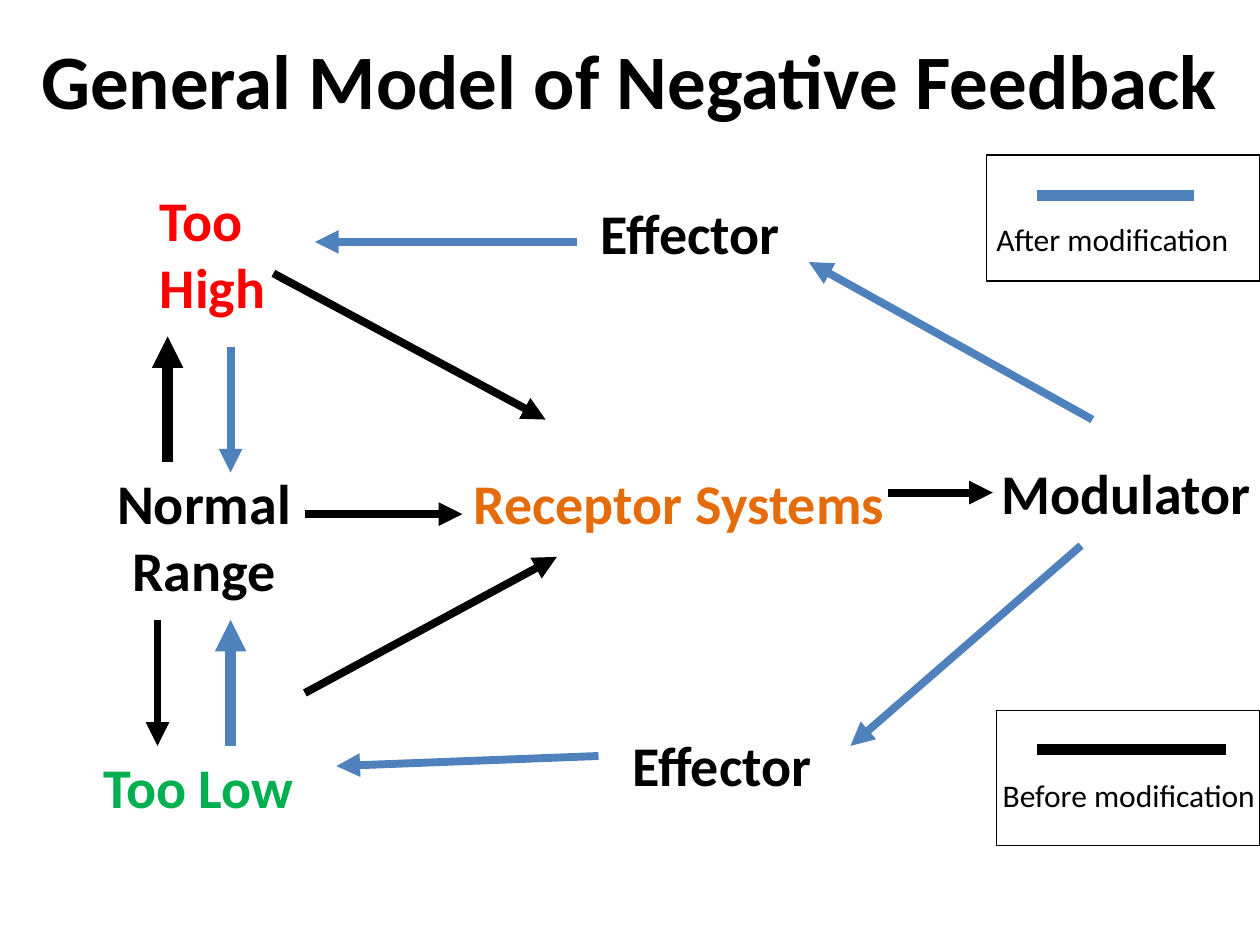
from typing import NamedTuple

from lxml.etree import SubElement
from pptx import Presentation
from pptx.dml.color import RGBColor
from pptx.enum.shapes import MSO_CONNECTOR as Conn, MSO_SHAPE as Shape
from pptx.enum.text import MSO_ANCHOR as Anchor, MSO_AUTO_SIZE as Fit, PP_ALIGN as Align
from pptx.oxml.ns import qn
from pptx.util import Inches, Pt

BLACK = RGBColor(0x00, 0x00, 0x00)
BLUE = RGBColor(0x4F, 0x81, 0xBD)
RED = RGBColor(0xFF, 0x00, 0x00)
GREEN = RGBColor(0x00, 0xB0, 0x50)
ORANGE = RGBColor(0xE4, 0x6C, 0x0A)
BEFORE, AFTER = BLACK, BLUE


class Label(NamedTuple):
    text: str
    box: tuple[float, float, float, float]
    color: RGBColor = BLACK
    align: Align = Align.LEFT
    wrap: bool = False
    size: int = 32
    bold: bool = True


class Line(NamedTuple):
    start: tuple[float, float]
    end: tuple[float, float]
    color: RGBColor
    width: float = 4.5
    arrow: bool = True


class Key(NamedTuple):
    frame: tuple[float, float, float, float]
    line: Line
    label: Label


LABELS = [
    Label("Too High", (1.17, 1.42, 1.25, 1.17), RED, wrap=True),
    Label("Normal Range", (0.83, 3.67, 1.58, 1.17), align=Align.CENTER, wrap=True),
    Label("Too Low", (0.67, 5.92, 1.81, 0.64), GREEN, Align.CENTER, True),
    Label("Effector", (4.67, 1.53, 1.66, 0.64)),
    Label("Receptor Systems", (3.66, 3.67, 3.49, 0.64), ORANGE),
    Label("Effector", (4.92, 5.75, 1.65, 0.64)),
    Label("Modulator", (7.85, 3.59, 2.2, 0.64)),
]

ARROWS = [
    Line((1.83, 2.75), (1.83, 3.75), AFTER),
    Line((1.25, 4.92), (1.25, 5.92), BEFORE),
    Line((1.83, 5.92), (1.83, 4.92), AFTER, 6),
    Line((1.33, 3.67), (1.33, 2.67), BEFORE, 6),
    Line((2.17, 2.17), (4.33, 3.33), BEFORE),
    Line((2.42, 5.5), (4.42, 4.42), BEFORE),
    Line((2.42, 4.08), (3.67, 4.08), BEFORE),
    Line((8.67, 3.33), (6.42, 2.08), AFTER),
    Line((8.58, 4.33), (6.75, 5.92), AFTER),
    Line((4.75, 6), (2.67, 6.08), AFTER),
    Line((4.58, 1.92), (2.5, 1.92), AFTER),
    Line((7.05, 3.91), (7.88, 3.91), BEFORE),
]

KEYS = [
    Key((7.83, 1.23, 2.17, 1),
        Line((8.23, 1.55), (9.48, 1.55), AFTER, 6, False),
        Label("After modification", (7.81, 1.7, 2.19, 0.4),
              wrap=True, size=18, bold=False)),
    Key((7.91, 5.64, 2.09, 1.07),
        Line((8.23, 5.95), (9.73, 5.95), BEFORE, 6, False),
        Label("Before modification", (7.86, 6.11, 2.23, 0.4),
              size=18, bold=False)),
]


def style(para, size: int, bold: bool, color: RGBColor, align: Align) -> None:
    para.alignment = align
    for name, value in dict(name="Calibri", size=Pt(size), bold=bold).items():
        setattr(para.font, name, value)
    para.font.color.rgb = color


def add_label(slide, label: Label) -> None:
    frame = slide.shapes.add_textbox(*map(Inches, label.box)).text_frame
    frame.text = label.text
    frame.word_wrap = label.wrap
    frame.auto_size = Fit.SHAPE_TO_FIT_TEXT
    style(frame.paragraphs[0], label.size, label.bold, label.color, label.align)


def add_line(slide, line: Line) -> None:
    ends = map(Inches, line.start + line.end)
    conn = slide.shapes.add_connector(Conn.STRAIGHT, *ends)
    conn.line.color.rgb = line.color
    conn.line.width = Pt(line.width)
    if line.arrow:
        SubElement(conn.line._get_or_add_ln(), qn("a:tailEnd"), type="triangle")
    SubElement(conn._element.spPr, qn("a:effectLst"))


def add_key(slide, key: Key) -> None:
    add_line(slide, key.line)
    add_label(slide, key.label)
    rect = slide.shapes.add_shape(Shape.RECTANGLE, *map(Inches, key.frame))
    rect.shadow.inherit = False
    rect.fill.background()
    rect.line.color.rgb = BLACK
    rect.line.width = Pt(0.75)


def add_title(slide, text: str) -> None:
    title = slide.shapes.title
    place = dict(left=0, top=0, width=10, height=1.25)
    for name, value in place.items():
        setattr(title, name, Inches(value))
    title.text_frame.text = text
    title.text_frame.vertical_anchor = Anchor.MIDDLE
    style(title.text_frame.paragraphs[0], 44, True, BLACK, Align.CENTER)


def main() -> None:
    prs = Presentation()
    prs.slide_width, prs.slide_height = Inches(10), Inches(7.5)
    slide = prs.slides.add_slide(prs.slide_layouts.get_by_name("Title Only"))
    add_title(slide, "General Model of Negative Feedback")
    for label in LABELS:
        add_label(slide, label)
    for arrow in ARROWS:
        add_line(slide, arrow)
    for key in KEYS:
        add_key(slide, key)
    prs.save("out.pptx")


if __name__ == "__main__":
    main()
